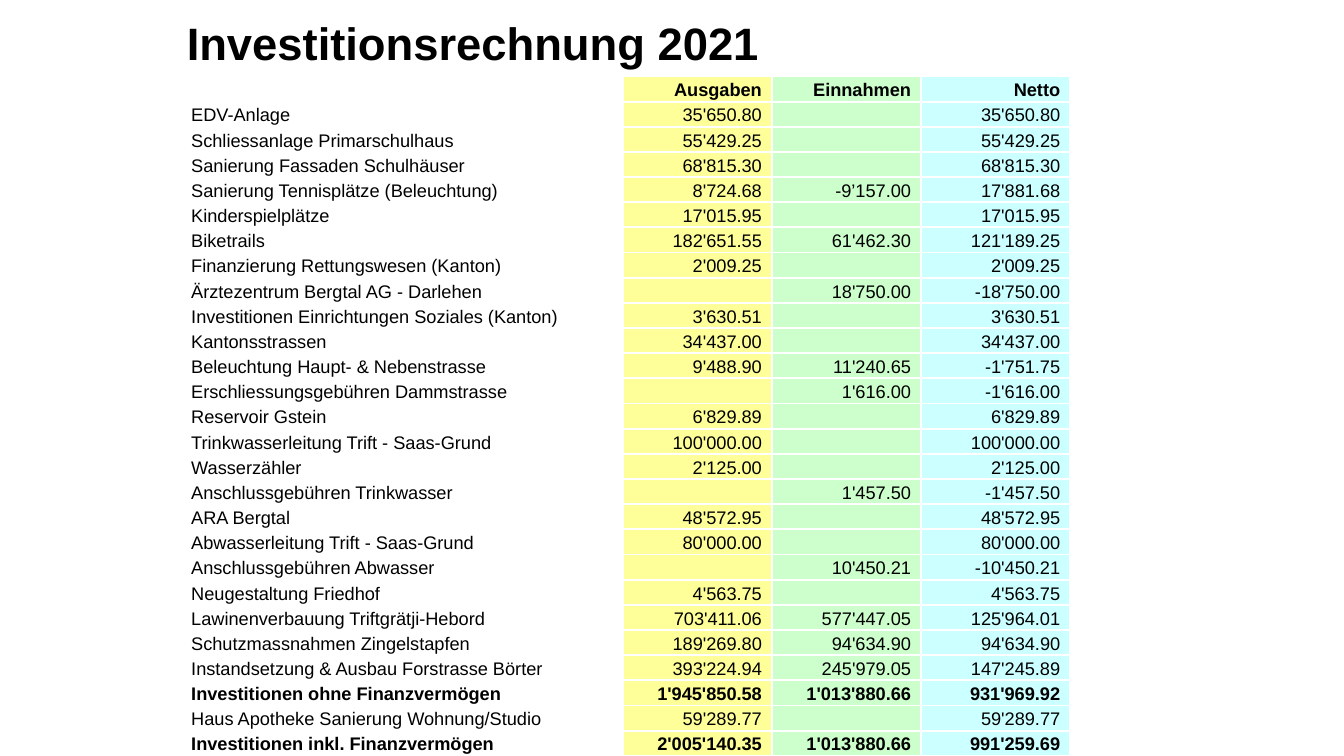
from lxml.etree import SubElement
from pptx import Presentation
from pptx.dml.color import RGBColor
from pptx.enum.text import MSO_ANCHOR, PP_ALIGN
from pptx.oxml.ns import qn
from pptx.util import Pt

BLACK = RGBColor(0x00, 0x00, 0x00)
WHITE = RGBColor(0xFF, 0xFF, 0xFF)
YELLOW = RGBColor(0xFF, 0xFF, 0x99)
GREEN = RGBColor(0xCC, 0xFF, 0xCC)
CYAN = RGBColor(0xCC, 0xFF, 0xFF)

FONT = "Arial"
ENTRY_SIZE = 13
COLUMN_WIDTHS = [315.36, 106.56, 106.56, 106.56]
COLUMN_FILLS = [None, YELLOW, GREEN, CYAN]

HEADINGS = ("", "Ausgaben", "Einnahmen", "Netto")
INVESTMENTS = [
    ("EDV-Anlage", "35'650.80", "", "35'650.80"),
    ("Schliessanlage Primarschulhaus", "55'429.25", "", "55'429.25"),
    ("Sanierung Fassaden Schulhäuser", "68'815.30", "", "68'815.30"),
    ("Sanierung Tennisplätze (Beleuchtung)", "8'724.68", "-9’157.00", "17'881.68"),
    ("Kinderspielplätze", "17'015.95", "", "17'015.95"),
    ("Biketrails", "182'651.55", "61'462.30", "121'189.25"),
    ("Finanzierung Rettungswesen (Kanton)", "2'009.25", "", "2'009.25"),
    ("Ärztezentrum Bergtal AG - Darlehen", "", "18'750.00", "-18'750.00"),
    ("Investitionen Einrichtungen Soziales (Kanton)", "3'630.51", "", "3'630.51"),
    ("Kantonsstrassen", "34'437.00", "", "34'437.00"),
    ("Beleuchtung Haupt- & Nebenstrasse", "9'488.90", "11'240.65", "-1'751.75"),
    ("Erschliessungsgebühren Dammstrasse", "", "1'616.00", "-1'616.00"),
    ("Reservoir Gstein", "6'829.89", "", "6'829.89"),
    ("Trinkwasserleitung Trift - Saas-Grund", "100'000.00", "", "100'000.00"),
    ("Wasserzähler", "2'125.00", "", "2'125.00"),
    ("Anschlussgebühren Trinkwasser", "", "1'457.50", "-1'457.50"),
    ("ARA Bergtal", "48'572.95", "", "48'572.95"),
    ("Abwasserleitung Trift - Saas-Grund", "80'000.00", "", "80'000.00"),
    ("Anschlussgebühren Abwasser", "", "10'450.21", "-10'450.21"),
    ("Neugestaltung Friedhof", "4'563.75", "", "4'563.75"),
    ("Lawinenverbauung Triftgrätji-Hebord", "703'411.06", "577'447.05", "125'964.01"),
    ("Schutzmassnahmen Zingelstapfen", "189'269.80", "94'634.90", "94'634.90"),
    ("Instandsetzung & Ausbau Forstrasse Börter", "393'224.94", "245'979.05", "147'245.89"),
]
TOTAL_WITHOUT_ASSETS = (
    "Investitionen ohne Finanzvermögen", "1'945'850.58", "1'013'880.66", "931'969.92")
FINANCIAL_ASSET = ("Haus Apotheke Sanierung Wohnung/Studio", "59'289.77", "", "59'289.77")
TOTAL_WITH_ASSETS = (
    "Investitionen inkl. Finanzvermögen", "2'005'140.35", "1'013'880.66", "991'259.69")
BOLD_ROWS = (HEADINGS, TOTAL_WITHOUT_ASSETS, TOTAL_WITH_ASSETS)


def style_font(font, size, bold):
    font.name = FONT
    font.size = Pt(size)
    font.bold = bold
    font.color.rgb = BLACK


def add_title(slide, left, top, width, height):
    heading = slide.shapes.add_textbox(Pt(left), Pt(top), Pt(width), Pt(height))
    frame = heading.text_frame
    frame.word_wrap = True
    frame.vertical_anchor = MSO_ANCHOR.MIDDLE
    frame.text = "Investitionsrechnung 2021"
    line = frame.paragraphs[0]
    line.line_spacing = 0.9
    style_font(line.runs[0].font, 32.4, True)


def add_borders(cell):
    properties = cell._tc.get_or_add_tcPr()
    for position, side in enumerate(("a:lnL", "a:lnR", "a:lnT", "a:lnB")):
        border = SubElement(properties, qn(side), w=str(Pt(1.5)))
        fill = SubElement(border, qn("a:solidFill"))
        SubElement(fill, qn("a:srgbClr"), val=str(WHITE))
        properties.insert(position, border)


def fill_cell(cell, entry, column, bold):
    cell.margin_left = cell.margin_right = Pt(7.2)
    cell.margin_top = cell.margin_bottom = Pt(0)
    cell.vertical_anchor = MSO_ANCHOR.MIDDLE
    if COLUMN_FILLS[column] is None:
        cell.fill.background()
    else:
        cell.fill.solid()
        cell.fill.fore_color.rgb = COLUMN_FILLS[column]
    add_borders(cell)

    cell.text_frame.text = entry
    line = cell.text_frame.paragraphs[0]
    line.alignment = PP_ALIGN.RIGHT if column else PP_ALIGN.LEFT
    line.line_spacing = 1.15
    line.space_after = Pt(10)
    for run in line.runs:
        style_font(run.font, ENTRY_SIZE, bold)
    if not entry:
        ending = SubElement(line._p, qn("a:endParaRPr"), sz=str(ENTRY_SIZE * 100))
        SubElement(ending, qn("a:latin"), typeface=FONT)


def add_accounts(slide, left, top, width, height):
    entries = [HEADINGS, *INVESTMENTS, TOTAL_WITHOUT_ASSETS, FINANCIAL_ASSET, TOTAL_WITH_ASSETS]
    accounts = slide.shapes.add_table(
        len(entries), len(HEADINGS), Pt(left), Pt(top), Pt(width), Pt(height)).table
    accounts.first_row = False
    accounts.horz_banding = False
    for column, column_width in zip(accounts.columns, COLUMN_WIDTHS):
        column.width = Pt(column_width)
    for row_index, row_entries in enumerate(entries):
        accounts.rows[row_index].height = Pt(height / len(entries))
        for column, entry in enumerate(row_entries):
            fill_cell(accounts.cell(row_index, column), entry, column, row_entries in BOLD_ROWS)


def main():
    presentation = Presentation()
    presentation.slide_width = Pt(960)
    presentation.slide_height = Pt(540)
    slide = presentation.slides.add_slide(presentation.slide_layouts[6])
    add_title(slide, 126.3, 11.8, 802, 42.5)
    add_accounts(slide, 129.4, 54.6, sum(COLUMN_WIDTHS), 470)
    presentation.save("out.pptx")


if __name__ == "__main__":
    main()
